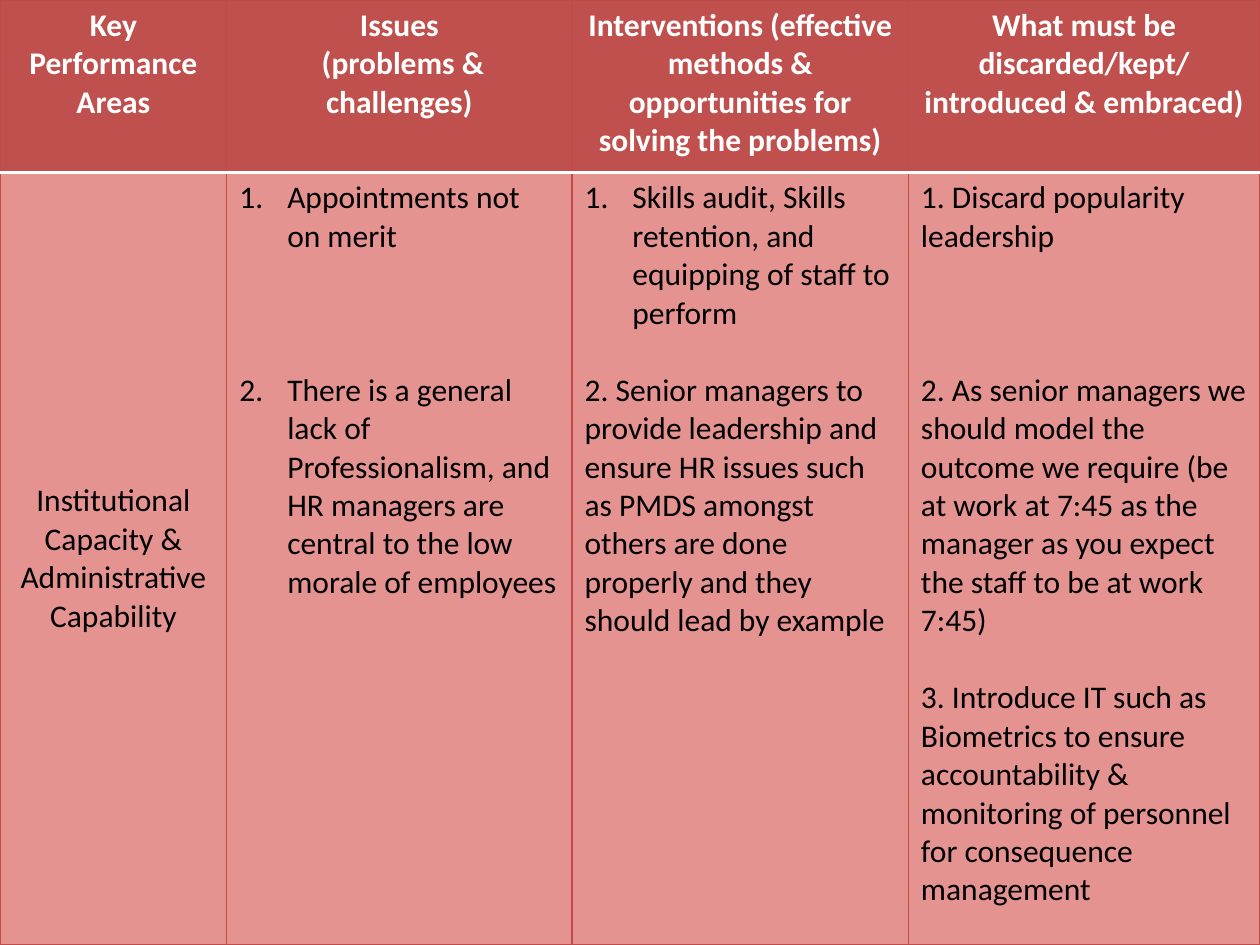
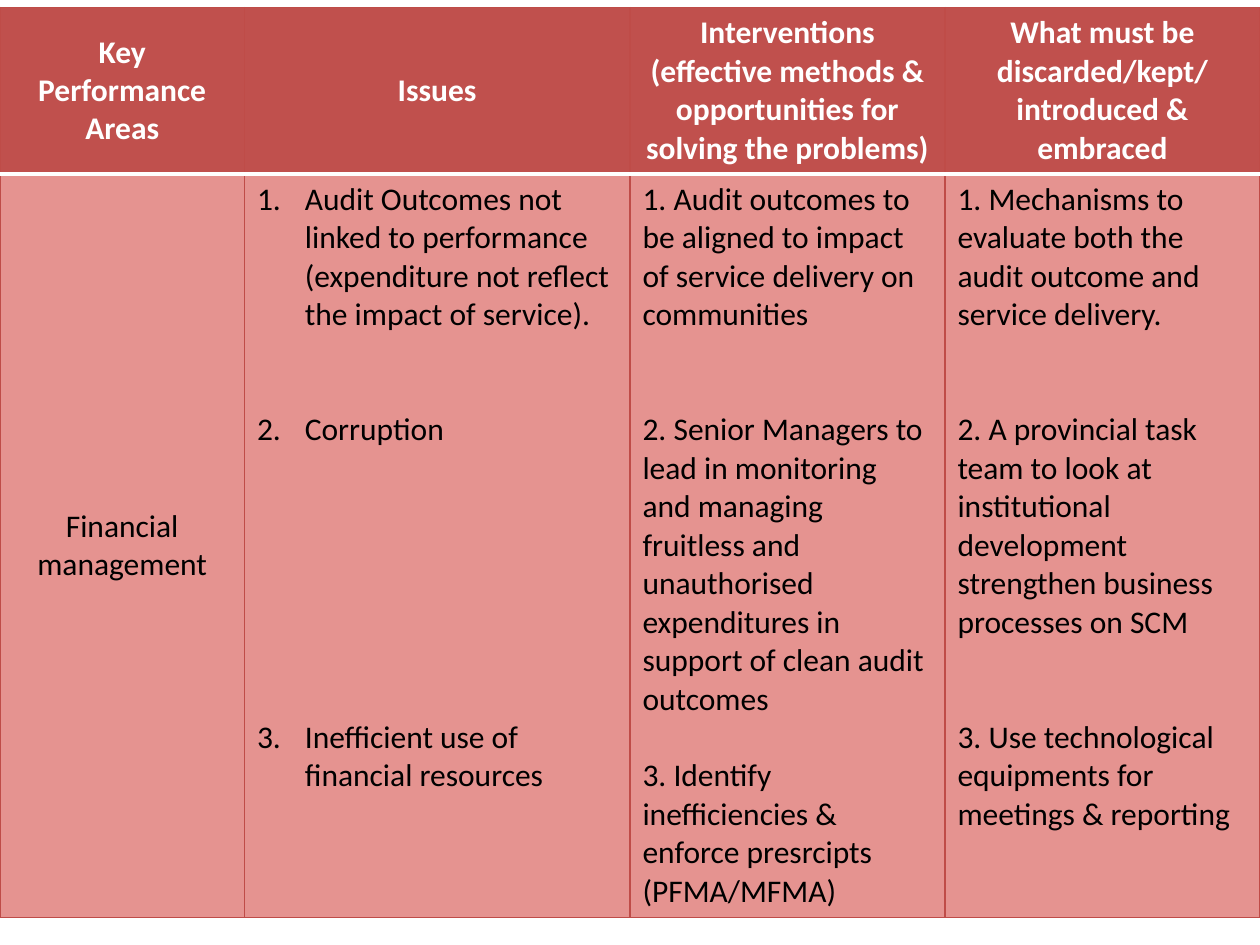
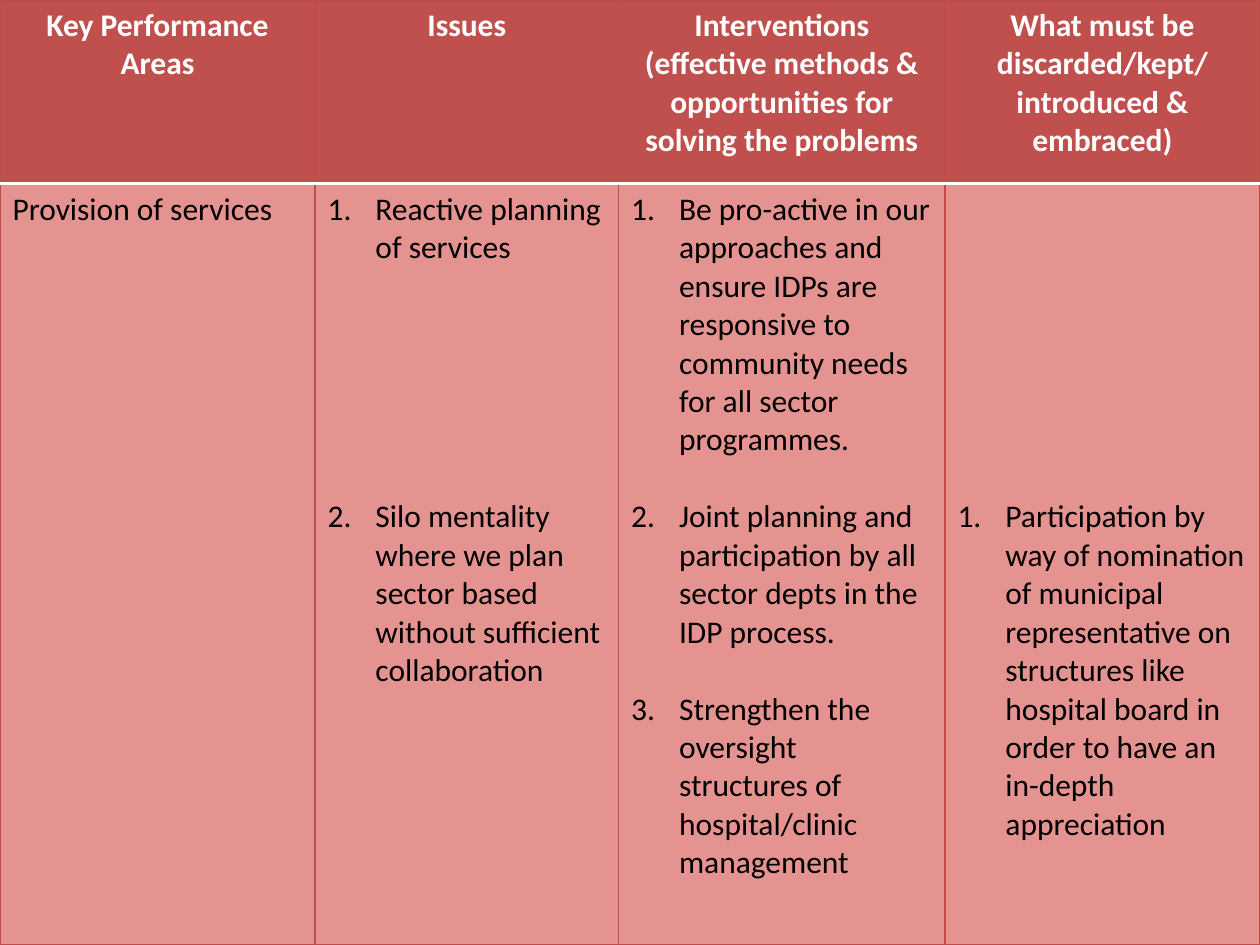
from dataclasses import dataclass

from lxml import etree
from pptx import Presentation
from pptx.dml.color import RGBColor
from pptx.enum.text import MSO_ANCHOR, PP_ALIGN
from pptx.oxml.ns import qn
from pptx.util import Inches, Pt

FONT, SIZE = "Calibri", 18
LINE_POINTS = 21.97  # height of one text line at SIZE
HANGING = Inches(0.38)
HEADER, BODY, GRID, RULE = "C0504D", "E59390", "BF4C48", "FFFFFF"
TOP, MIDDLE = MSO_ANCHOR.TOP, MSO_ANCHOR.MIDDLE
LEFT, CENTER = PP_ALIGN.LEFT, PP_ALIGN.CENTER


def color(value):
    return RGBColor.from_string(value)


@dataclass
class Item:
    """A paragraph of a cell; gap counts the free lines above it."""
    text: str
    gap: int = 0
    numbered: bool = False


def numbered(text, gap=0):
    return Item(text, gap, True)


class Deck:
    def __init__(self):
        self.deck = Presentation()
        self.deck.slide_width, self.deck.slide_height = Inches(10), Inches(7.5)
        self.page = None

    def add_page(self):
        self.page = self.deck.slides.add_slide(self.deck.slide_layouts[6])

    def add_table(self, top, widths, heights):
        frame = self.page.shapes.add_table(
            len(heights), len(widths), 0, Inches(top),
            Inches(sum(widths)), Inches(sum(heights)))
        table = frame.table
        table.horz_banding = False
        for column, width in zip(table.columns, widths):
            column.width = Inches(width)
        for row, height in zip(table.rows, heights):
            row.height = Inches(height)
        return table

    def border(self, cell, side, value, points):
        line = etree.SubElement(cell._tc.get_or_add_tcPr(), qn(f"a:ln{side}"),
                                w=str(Pt(points)))
        fill = etree.SubElement(line, qn("a:solidFill"))
        etree.SubElement(fill, qn("a:srgbClr"), val=value)

    def style_cell(self, cell, is_header, anchor):
        ruled_side = "B" if is_header else "T"
        for side in "LRTB":
            if side == ruled_side:
                self.border(cell, side, RULE, 2)
            else:
                self.border(cell, side, GRID, 0.75)
        cell.fill.solid()
        cell.fill.fore_color.rgb = color(HEADER if is_header else BODY)
        cell.vertical_anchor = anchor

    def number(self, para):
        properties = para._p.get_or_add_pPr()
        properties.set("marL", str(HANGING))
        properties.set("indent", str(-HANGING))
        etree.SubElement(properties, qn("a:buFont"), typeface="+mj-lt")
        etree.SubElement(properties, qn("a:buAutoNum"), type="arabicPeriod")

    def fill_cell(self, cell, items, is_header=False, anchor=TOP, align=LEFT):
        self.style_cell(cell, is_header, anchor)
        for index, item in enumerate(items):
            frame = cell.text_frame
            para = frame.add_paragraph() if index else frame.paragraphs[0]
            para.alignment = align
            if item.gap and index:
                para.space_before = Pt(item.gap * LINE_POINTS)
            elif item.gap:
                cell.margin_top += Pt(item.gap * LINE_POINTS)
            if item.numbered:
                self.number(para)
            span = para.add_run()
            span.text = item.text
            span.font.name, span.font.size = FONT, Pt(SIZE)
            span.font.bold = is_header
            span.font.color.rgb = color("FFFFFF" if is_header else "000000")

    def add_area_page(self, widths, heights, headings, area, columns, top=0,
                      header_anchor=TOP, area_anchor=MIDDLE, area_align=CENTER):
        """Add a page whose table covers one key performance area."""
        self.add_page()
        table = self.add_table(top, widths, heights)
        for index, heading in enumerate(["Key Performance Areas", *headings]):
            items = [Item(line) for line in heading.split("\n")]
            self.fill_cell(table.cell(0, index), items, True, header_anchor, CENTER)
        self.fill_cell(table.cell(1, 0), [Item(area)],
                       anchor=area_anchor, align=area_align)
        for index, items in enumerate(columns, 1):
            self.fill_cell(table.cell(1, index), items)


INTERVENTIONS = ("Interventions (effective methods & opportunities "
                 "for solving the problems")
CHANGES = "What must be discarded/kept/ introduced & embraced"


def main():
    deck = Deck()

    deck.add_area_page(
        [1.8, 2.74, 2.67, 2.79], [1.37, 6.13],
        ["Issues\n (problems & challenges)", INTERVENTIONS + ")", CHANGES + ")"],
        "Institutional Capacity & Administrative Capability",
        [[numbered("Appointments not on merit"),
          numbered("There is a general lack of Professionalism, and HR managers "
                   "are central to the low morale of employees", 3)],
         [numbered("Skills audit, Skills retention, and equipping of staff "
                   "to perform"),
          Item("2. Senior managers to provide leadership and ensure HR issues "
               "such as PMDS amongst others are done properly and they should "
               "lead by example", 1)],
         [Item("1. Discard popularity leadership"),
          Item("2. As senior managers we should model the outcome we require "
               "(be at work at 7:45 as the manager as you expect the staff to "
               "be at work 7:45)", 3),
          Item("3. Introduce IT such as Biometrics to ensure accountability & "
               "monitoring of personnel for consequence management", 1)]])

    deck.add_area_page(
        [1.94, 3.06, 2.5, 2.5], [1.32, 5.9],
        ["Issues", INTERVENTIONS + ")", CHANGES],
        "Financial management",
        [[numbered("Audit Outcomes not linked to performance (expenditure not "
                   "reflect the impact of service)."),
          numbered("Corruption", 2),
          numbered("Inefficient use of financial resources", 7)],
         [Item("1. Audit outcomes to be aligned to impact of service delivery "
               "on communities"),
          Item("2. Senior Managers to lead in monitoring and managing fruitless "
               "and unauthorised expenditures in support of clean audit "
               "outcomes", 2),
          Item("3. Identify inefficiencies & enforce presrcipts (PFMA/MFMA)", 1)],
         [Item("1. Mechanisms to evaluate both the audit outcome and service "
               "delivery."),
          Item("2. A provincial task team to look at institutional development "
               "strengthen business processes on SCM", 2),
          Item("3. Use technological equipments for meetings & reporting", 2)]],
        top=0.06, header_anchor=MIDDLE)

    deck.add_area_page(
        [2.5, 2.41, 2.59, 2.5], [1.46, 6.04],
        ["Issues", INTERVENTIONS, CHANGES + ")"],
        "Provision of services",
        [[numbered("Reactive planning of services"),
          numbered("Silo mentality where we plan sector based without "
                   "sufficient collaboration", 6)],
         [numbered("Be pro-active in our approaches and ensure IDPs are "
                   "responsive to community needs for all sector programmes."),
          numbered("Joint planning and participation by all sector depts in "
                   "the IDP process.", 1),
          numbered("Strengthen the oversight structures of hospital/clinic "
                   "management", 1)],
         [numbered("Participation by way of nomination of municipal "
                   "representative on structures like hospital board in order "
                   "to have an in-depth appreciation", 8)]],
        area_anchor=TOP, area_align=LEFT)

    deck.deck.save("out.pptx")


if __name__ == "__main__":
    main()
